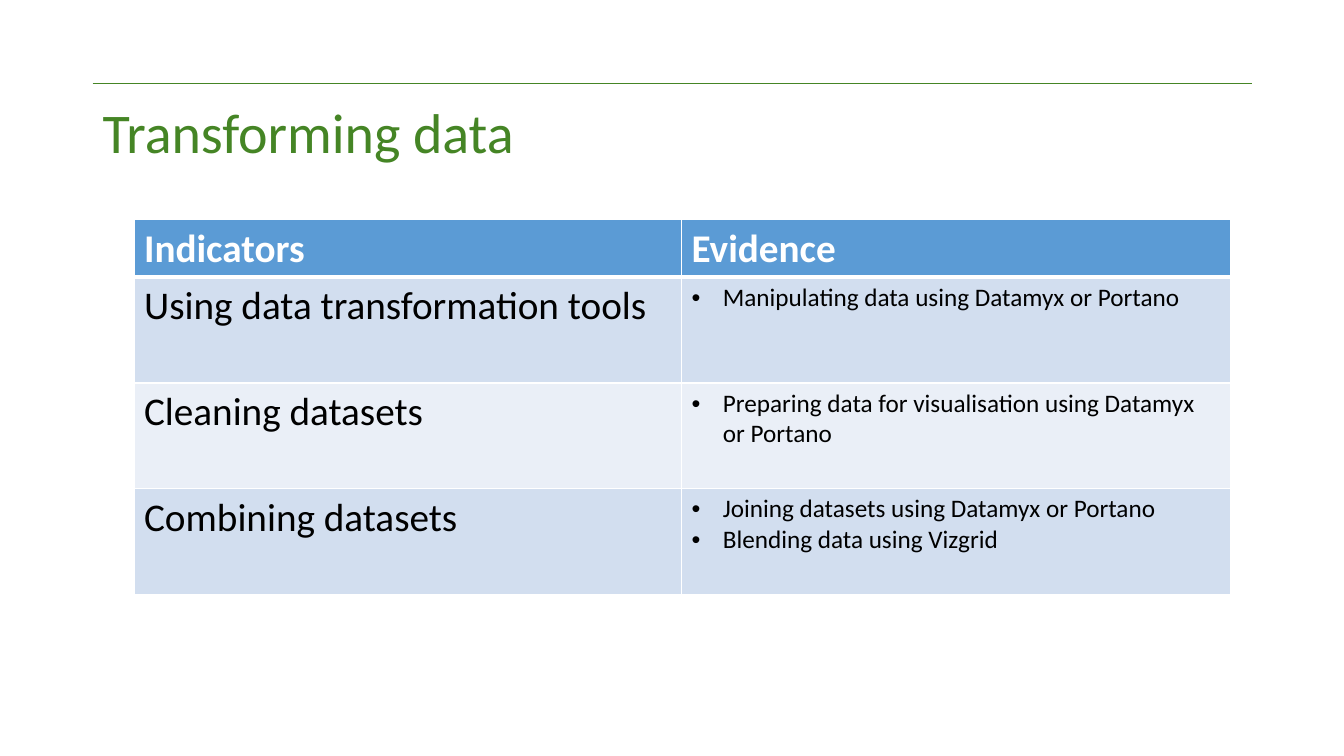
from pptx import Presentation
from pptx.dml.color import RGBColor
from pptx.enum.shapes import MSO_CONNECTOR
from pptx.enum.text import MSO_ANCHOR
from pptx.oxml.ns import qn
from pptx.util import Inches, Pt
from lxml import etree

STRAIGHT = MSO_CONNECTOR.STRAIGHT
MIDDLE = MSO_ANCHOR.MIDDLE

COLORS = {
    "green": "458525",
    "header": "5B9BD5",
    "odd": "D2DEEF",
    "even": "EAEFF7",
    "white": "FFFFFF",
    "black": "000000",
}

HEADINGS = ("Indicators", "Evidence")
INDICATORS = [
    ("Using data transformation tools", ["Manipulating data using Datamyx or Portano"]),
    ("Cleaning datasets", ["Preparing data for visualisation using Datamyx or Portano"]),
    ("Combining datasets", ["Joining datasets using Datamyx or Portano", "Blending data using Vizgrid"]),
]


class SlideBuilder:
    """Draws styled elements on the current slide."""

    font = "Calibri"

    def __init__(self, page):
        self.page = page

    def color(self, name):
        return RGBColor.from_string(COLORS[name])

    def style(self, para, size, color, bold=False):
        for span in para.runs:
            span.font.name = self.font
            span.font.size = Pt(size)
            span.font.bold = bold
            span.font.color.rgb = self.color(color)

    def rule(self, left, top, width):
        line = self.page.shapes.add_connector(
            STRAIGHT, Inches(left), Inches(top), Inches(left + width), Inches(top))
        line.line.color.rgb = self.color("green")
        line.line.width = Pt(0.5)
        etree.SubElement(line._element.spPr, qn("a:effectLst"))

    def title(self, text, left, top, width, height):
        box = self.page.shapes.add_textbox(
            Inches(left), Inches(top), Inches(width), Inches(height))
        frame = box.text_frame
        frame.word_wrap = True
        frame.vertical_anchor = MIDDLE
        frame.text = text
        para = frame.paragraphs[0]
        para.line_spacing = 0.9
        self.style(para, 40, "green")

    def bullet(self, para):
        properties = para._p.get_or_add_pPr()
        properties.set("marL", str(Inches(0.31)))
        properties.set("indent", str(-Inches(0.31)))
        etree.SubElement(properties, qn("a:buFont"), typeface="Arial")
        etree.SubElement(properties, qn("a:buChar"), char="•")

    def borders(self, cell, bottom, top):
        properties = cell._tc.get_or_add_tcPr()
        for side, width in (("L", 1), ("R", 1), ("T", top), ("B", bottom)):
            line = etree.SubElement(properties, qn(f"a:ln{side}"), w=str(Pt(width)))
            fill = etree.SubElement(line, qn("a:solidFill"))
            etree.SubElement(fill, qn("a:srgbClr"), val=COLORS["white"])

    def cell(self, cell, lines, size, color, fill, bold=False, bulleted=False, top=1, bottom=1):
        self.borders(cell, bottom, top)
        cell.fill.solid()
        cell.fill.fore_color.rgb = self.color(fill)
        cell.text_frame.text = "\n".join(lines)
        for para in cell.text_frame.paragraphs:
            if bulleted:
                self.bullet(para)
            self.style(para, size, color, bold)

    def table(self, left, top, widths, header_height, row_height):
        heights = [header_height] + [row_height] * len(INDICATORS)
        table = self.page.shapes.add_table(
            len(heights), len(widths), Inches(left), Inches(top),
            Inches(sum(widths)), Inches(sum(heights))).table
        table.horz_banding = False
        for column, width in zip(table.columns, widths):
            column.width = Inches(width)
        for row, height in zip(table.rows, heights):
            row.height = Inches(height)
        for column, heading in enumerate(HEADINGS):
            self.cell(table.cell(0, column), [heading], 28, "white", "header", bold=True, bottom=3)
        for row, (indicator, evidence) in enumerate(INDICATORS, 1):
            fill = "odd" if row % 2 else "even"
            edge = 3 if row == 1 else 1
            self.cell(table.cell(row, 0), [indicator], 28, "black", fill, top=edge)
            self.cell(table.cell(row, 1), evidence, 18, "black", fill, bulleted=True, top=edge)


def main():
    deck = Presentation()
    deck.slide_width = Inches(13.33)
    deck.slide_height = Inches(7.5)
    builder = SlideBuilder(deck.slides.add_slide(deck.slide_layouts[6]))
    builder.rule(0.92, 0.83, 11.5)
    builder.title("Transforming data", 0.92, 0.83, 11.5, 1.02)
    builder.table(1.33, 2.18, (5.43, 5.45), 0.57, 1.05)
    deck.save("out.pptx")


if __name__ == "__main__":
    main()
